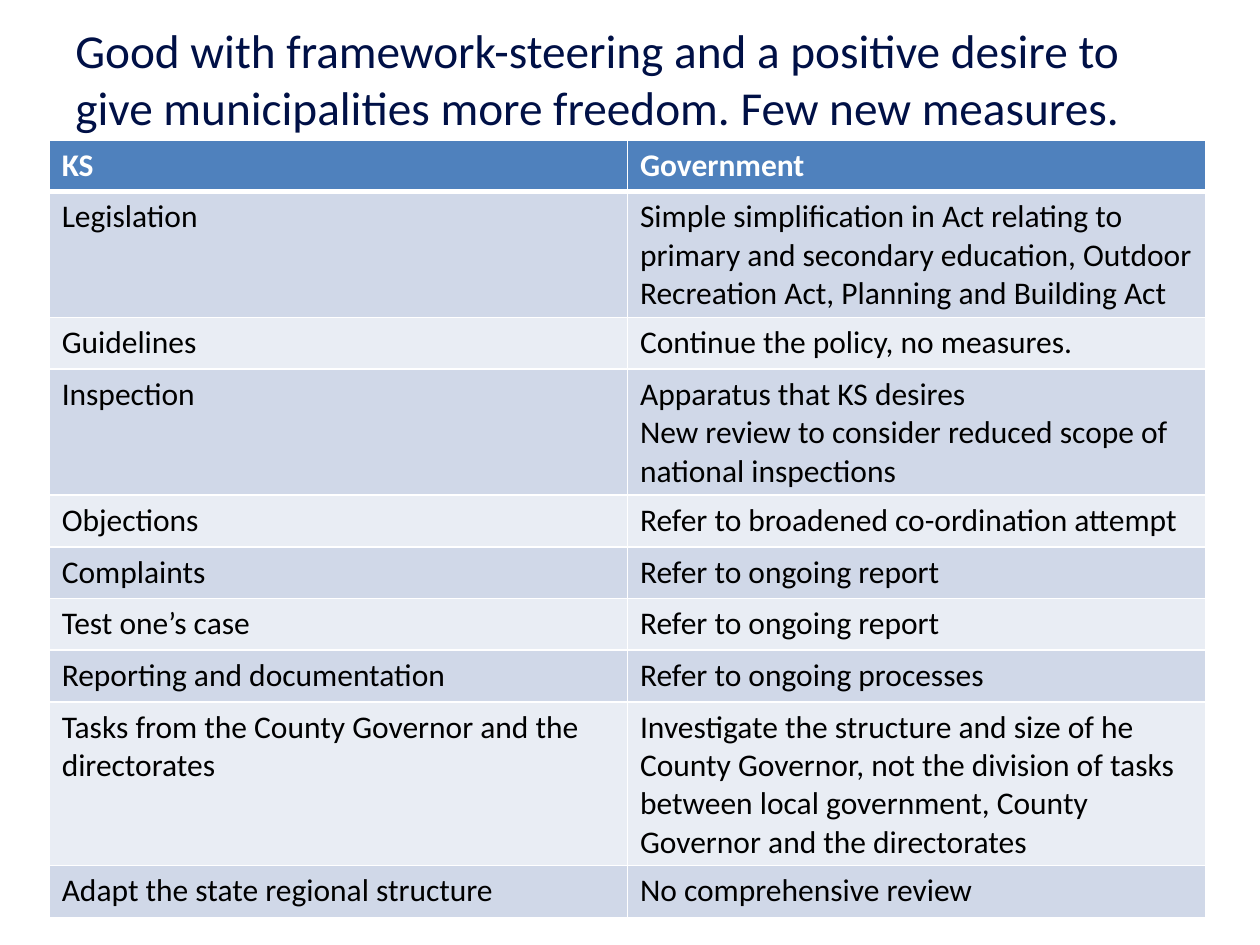
from lxml import etree
from pptx import Presentation
from pptx.dml.color import RGBColor
from pptx.enum import text
from pptx.oxml import ns
from pptx.util import Inches, Pt

WHITE = RGBColor(0xFF, 0xFF, 0xFF)
BLACK = RGBColor(0x00, 0x00, 0x00)
NAVY = RGBColor(0x00, 0x10, 0x46)
HEADER_BLUE = RGBColor(0x4F, 0x81, 0xBD)
BAND_DARK = RGBColor(0xD0, 0xD8, 0xE8)
BAND_LIGHT = RGBColor(0xE9, 0xED, 0xF4)

TITLE = ("Good with framework-steering and a positive desire to "
         "give municipalities more freedom. Few new measures.")
ROWS = [
    ("KS", "Government"),
    ("Legislation", "Simple simplification in Act relating to primary and secondary "
     "education, Outdoor Recreation Act, Planning and Building Act"),
    ("Guidelines", "Continue the policy, no measures."),
    ("Inspection", "Apparatus that KS desires\n"
     "New review to consider reduced scope of national inspections"),
    ("Objections", "Refer to broadened co-ordination attempt"),
    ("Complaints", "Refer to ongoing report"),
    ("Test one’s case", "Refer to ongoing report"),
    ("Reporting and documentation", "Refer to ongoing processes"),
    ("Tasks from the County Governor and the directorates",
     "Investigate the structure and size of he County Governor, not the division of "
     "tasks between local government, County Governor and the directorates"),
    ("Adapt the state regional structure", "No comprehensive review"),
]


def write_text(frame, content, size=18, color=BLACK, bold=False):
    frame.text = content
    frame.word_wrap = True
    for paragraph in frame.paragraphs:
        font = paragraph.font
        font.name, font.size, font.bold = "Calibri", Pt(size), bold
        font.color.rgb = color


def add_border(cell, side, width):
    properties = cell._tc.get_or_add_tcPr()
    line = etree.SubElement(properties, ns.qn(f"a:ln{side}"), w=str(Pt(width)))
    fill = etree.SubElement(line, ns.qn("a:solidFill"))
    etree.SubElement(fill, ns.qn("a:srgbClr"), val=str(WHITE))


presentation = Presentation()
presentation.slide_width, presentation.slide_height = Inches(10), Inches(7.5)
slide = presentation.slides.add_slide(presentation.slide_layouts[6])

title = slide.shapes.add_textbox(Inches(0.5), Inches(0), Inches(9), Inches(1.24))
write_text(title.text_frame, TITLE, size=27, color=NAVY)
title.text_frame.vertical_anchor = text.MSO_ANCHOR.MIDDLE

row_height = Inches(0.41)
table = slide.shapes.add_table(len(ROWS), 2, Inches(0.39), Inches(1.11),
                               Inches(9.18), row_height * len(ROWS)).table
for row_index, row in enumerate(ROWS):
    table.rows[row_index].height = row_height
    is_header = row_index == 0
    band = BAND_DARK if row_index % 2 else BAND_LIGHT
    for column_index, content in enumerate(row):
        cell = table.cell(row_index, column_index)
        write_text(cell.text_frame, content,
                   color=WHITE if is_header else BLACK, bold=is_header)
        for side in "LRTB":
            below_header = (row_index, side) in ((0, "B"), (1, "T"))
            add_border(cell, side, 3 if below_header else 1)
        cell.fill.solid()
        cell.fill.fore_color.rgb = HEADER_BLUE if is_header else band

presentation.save("out.pptx")
